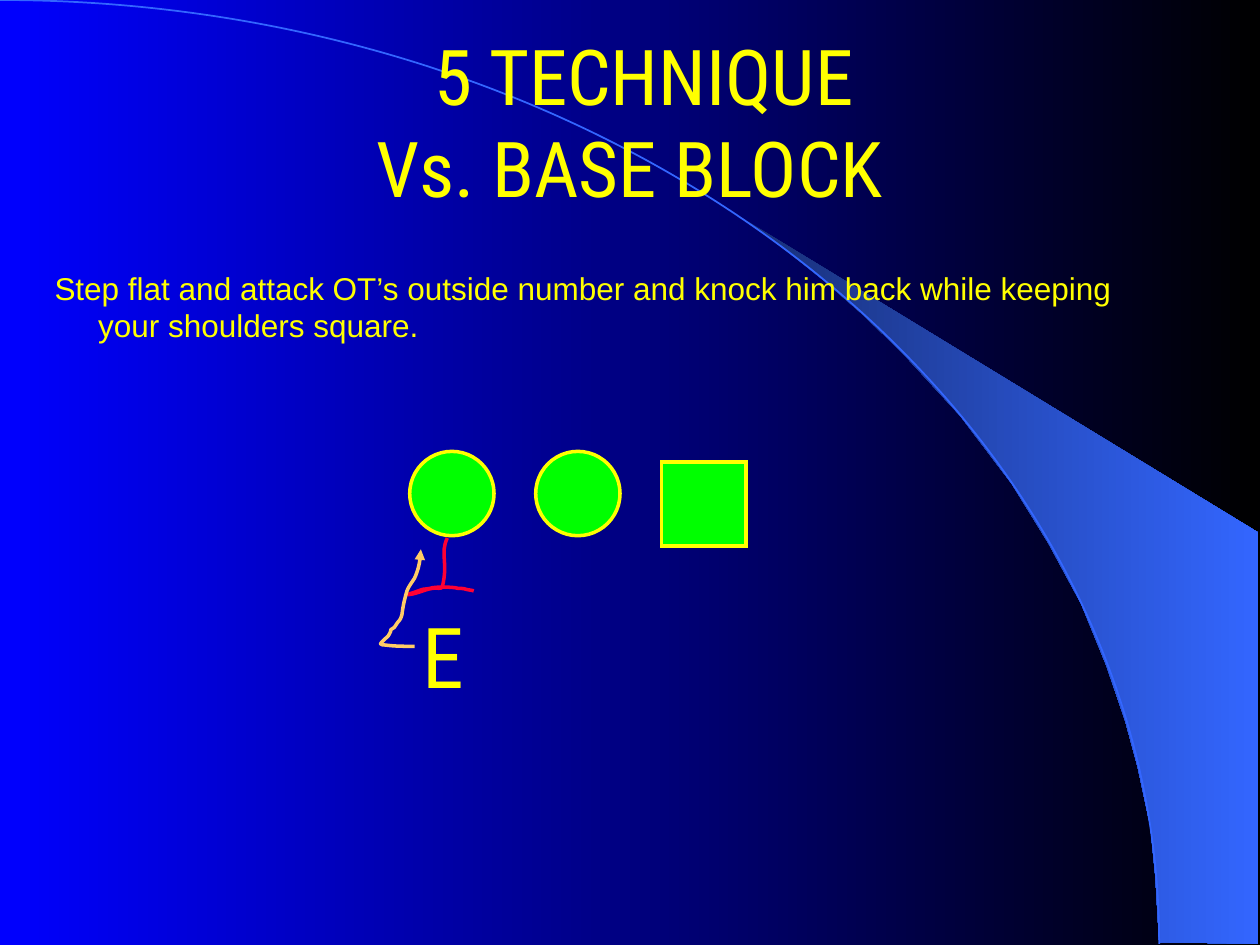
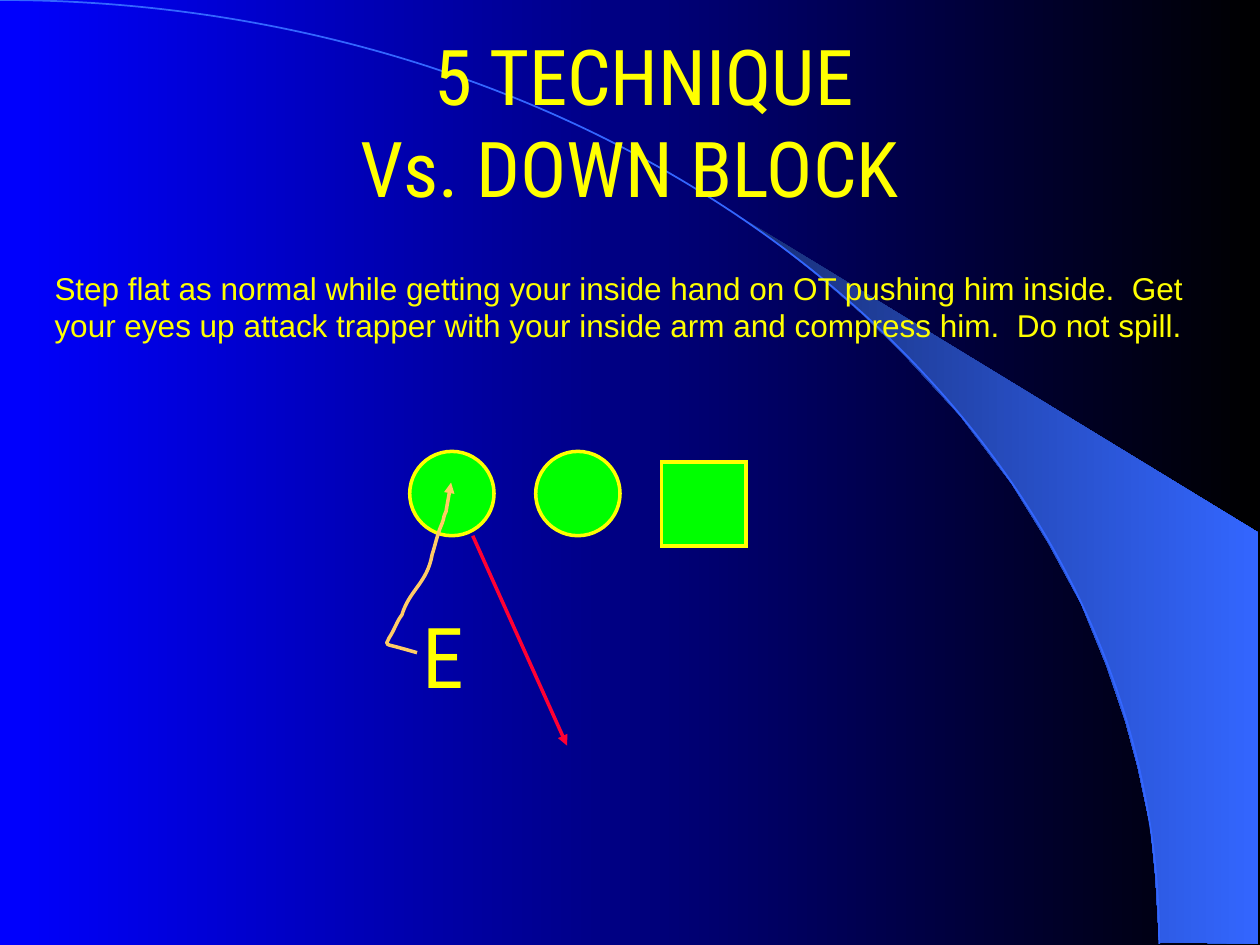
from lxml import etree
from pptx import Presentation
from pptx.dml.color import RGBColor
from pptx.enum.shapes import MSO_CONNECTOR, MSO_SHAPE
from pptx.enum.text import MSO_ANCHOR, MSO_AUTO_SIZE, PP_ALIGN
from pptx.oxml.ns import qn
from pptx.util import Cm, Pt

RECT, OVAL = MSO_SHAPE.RECTANGLE, MSO_SHAPE.OVAL
LINE = MSO_CONNECTOR.STRAIGHT
MIDDLE, CENTER = MSO_ANCHOR.MIDDLE, PP_ALIGN.CENTER
FIXED, GROW = MSO_AUTO_SIZE.NONE, MSO_AUTO_SIZE.SHAPE_TO_FIT_TEXT

BLUE = RGBColor(0x00, 0x00, 0xFF)
BLACK = RGBColor(0x00, 0x00, 0x00)
DUSK = RGBColor(0x18, 0x2F, 0x76)
SKY = RGBColor(0x33, 0x66, 0xFF)
YELLOW = RGBColor(0xFF, 0xFF, 0x00)
GREEN = RGBColor(0x00, 0xFF, 0x00)
RED = RGBColor(0xFF, 0x00, 0x33)
SAND = RGBColor(0xFF, 0xCC, 0x66)
HEAD, BODY = "Roboto Condensed", "Arial"

# Outlines are in units of a tenth of the slide width.
WEDGE = [(9.2, 7.48), (9.99, 7.49), (9.99, 4.23), (5.89, 1.73), (6.24, 1.99),
         (6.53, 2.22), (6.85, 2.5), (7.16, 2.8), (7.62, 3.3), (8.03, 3.84),
         (8.32, 4.31), (8.58, 4.79), (8.78, 5.28), (8.93, 5.72),
         (9.03, 6.09), (9.13, 6.56), (9.17, 6.96), (9.2, 7.48)]
# Curves: a start point, then two handles and an end for each piece.
ARC = [(0, 0), (5.08, 0), (9.2, 3.35), (9.2, 7.49)]
BLOCK = [(3.55, 4.27), (3.49, 4.4), (3.56, 4.46), (3.51, 4.66),
         (3.5, 4.68), (3.46, 4.66), (3.43, 4.67),
         (3.36, 4.68), (3.3, 4.72), (3.22, 4.72),
         (3.21, 4.72), (3.24, 4.72), (3.26, 4.71),
         (3.27, 4.71), (3.28, 4.7), (3.29, 4.7),
         (3.3, 4.7), (3.31, 4.69), (3.32, 4.69),
         (3.37, 4.67), (3.35, 4.68), (3.41, 4.67),
         (3.44, 4.66), (3.48, 4.66), (3.51, 4.66),
         (3.56, 4.66), (3.6, 4.66), (3.64, 4.67),
         (3.67, 4.67), (3.69, 4.67), (3.71, 4.68),
         (3.73, 4.68), (3.76, 4.69), (3.76, 4.69)]
ATTACK = [(3.29, 5.13), (3.21, 5.13), (3.13, 5.13), (3.06, 5.12),
          (3.04, 5.12), (3.03, 5.12), (3.02, 5.11),
          (3.02, 5.1), (3.08, 5.05), (3.08, 5.05),
          (3.13, 4.97), (3.07, 5.02), (3.13, 4.98),
          (3.18, 4.9), (3.17, 4.94), (3.19, 4.88),
          (3.2, 4.8), (3.21, 4.76), (3.23, 4.69),
          (3.24, 4.66), (3.27, 4.62), (3.29, 4.59),
          (3.32, 4.52), (3.34, 4.43), (3.34, 4.36)]
SQUEEZE = [(3.31, 5.18), (3.24, 5.16), (3.17, 5.14), (3.09, 5.12),
           (3.08, 5.11), (3.07, 5.12), (3.07, 5.1),
           (3.07, 5.08), (3.09, 5.08), (3.09, 5.06),
           (3.13, 5), (3.15, 4.93), (3.19, 4.88),
           (3.25, 4.68), (3.39, 4.63), (3.43, 4.4),
           (3.45, 4.34), (3.46, 4.29), (3.48, 4.23),
           (3.49, 4.19), (3.51, 4.16), (3.52, 4.12),
           (3.52, 4.1), (3.54, 4.06), (3.54, 4.06),
           (3.55, 4), (3.56, 3.95), (3.57, 3.89),
           (3.58, 3.87), (3.58, 3.83), (3.58, 3.83)]


def outline(slide, points, close=False):
    spots = [(Cm(x * 2.54), Cm(y * 2.54)) for x, y in points]
    pen = slide.shapes.build_freeform(*spots[0])
    pen.add_line_segments(spots[1:], close=close)
    shape = pen.convert_to_shape()
    shape.shadow.inherit = False
    return shape


def bend(shape):
    """Join each three straight pieces of the outline into a cubic one."""
    lines = list(shape.element.iter(qn("a:lnTo")))
    for i in range(0, len(lines), 3):
        cubic = etree.Element(qn("a:cubicBezTo"))
        lines[i].addprevious(cubic)
        for line in lines[i:i + 3]:
            cubic.append(line[0])
            line.getparent().remove(line)


def blend(fill, start, end):
    fill.gradient()
    fill.gradient_angle = 0
    for stop, color in zip(fill.gradient_stops, (start, end)):
        stop.color.rgb = color


def stroke(shape, color, width=2, arrow=False, sharp=False):
    shape.line.color.rgb = color
    shape.line.width = Pt(width)
    edge = shape.element.spPr.find(qn("a:ln"))
    if sharp:
        etree.SubElement(edge, qn("a:miter"), lim="800000")
    if arrow:
        etree.SubElement(edge, qn("a:tailEnd"), type="triangle")


def add_curve(slide, curve, color, width=2, arrow=False):
    shape = outline(slide, curve)
    bend(shape)
    shape.fill.background()
    stroke(shape, color, width, arrow)
    return shape


def add_arrow(slide, x1, y1, x2, y2, color):
    line = slide.shapes.add_connector(LINE, Cm(x1), Cm(y1), Cm(x2), Cm(y2))
    stroke(line, color, arrow=True)
    etree.SubElement(line.element.spPr, qn("a:effectLst"))


def set_font(run, name, size):
    run.font.name = name
    run.font.size = Pt(size)
    run.font.color.rgb = YELLOW


def add_title(slide, lines):
    title = slide.shapes.title
    title.left, title.top = Cm(1.9), Cm(0)
    title.width, title.height = Cm(21.6), Cm(4.87)
    frame = title.text_frame
    frame.auto_size, frame.vertical_anchor = FIXED, MIDDLE
    para = frame.paragraphs[0]
    para.alignment = CENTER
    props = para._p.get_or_add_pPr()
    props.set("marL", "0")
    props.set("indent", str(Cm(0.58)))
    for i, line in enumerate(lines):
        if i:
            para.add_line_break()
        run = para.add_run()
        run.text = line
        set_font(run, HEAD, 44)


def add_text(slide, box, lines, name, size, inset=0):
    """Add unwrapped lines; those after the first start at the inset."""
    shape = slide.shapes.add_textbox(*map(Cm, box))
    frame = shape.text_frame
    frame.word_wrap, frame.auto_size = False, GROW
    for i, line in enumerate(lines):
        para = frame.add_paragraph() if i else frame.paragraphs[0]
        if i and inset:
            para._p.get_or_add_pPr().set("marL", str(Cm(inset)))
        run = para.add_run()
        run.text = line
        set_font(run, name, size)


def add_player(slide, kind, left, top):
    shape = slide.shapes.add_shape(kind, Cm(left), Cm(top), Cm(1.7), Cm(1.7))
    shape.shadow.inherit = False
    shape.fill.solid()
    shape.fill.fore_color.rgb = GREEN
    stroke(shape, YELLOW, sharp=kind == RECT)


def add_front(slide):
    """Draw the blockers and the end."""
    add_player(slide, RECT, 13.34, 9.31)
    for i in range(2):
        add_player(slide, OVAL, 8.26 + 2.54 * i, 9.1)
    add_text(slide, (8.26, 12.07, 1.22, 2.29), ["E"], HEAD, 48)


def dress(slide, layout):
    """Put the backdrop and its arc on the layout."""
    blend(layout.background.fill, BLUE, BLACK)
    wedge = outline(slide, WEDGE, close=True)
    blend(wedge.fill, DUSK, SKY)
    wedge.line.fill.background()
    arc = add_curve(slide, ARC, SKY, 1)
    for i, shape in enumerate((wedge, arc)):
        layout.shapes.element.insert(2 + i, shape.element)


def add_play(deck, layout, block, width, lines, inset=0):
    slide = deck.slides.add_slide(layout)
    add_title(slide, ["5 TECHNIQUE", f"Vs. {block} BLOCK"])
    add_text(slide, (0.85, 5.29, width, 1.78), lines, BODY, 18, inset)
    add_front(slide)
    return slide


def main():
    deck = Presentation()
    deck.slide_width, deck.slide_height = Cm(25.4), Cm(19.05)
    layout = deck.slide_layouts[5]

    base = add_play(deck, layout, "BASE", 22, [
        "Step flat and attack OT’s outside number and knock him back "
        "while keeping",
        "your shoulders square."], inset=0.88)
    dress(base, layout)
    add_curve(base, BLOCK, RED)
    add_curve(base, ATTACK, SAND, arrow=True)

    down = add_play(deck, layout, "DOWN", 23.44, [
        "Step flat as normal while getting your inside hand on OT "
        "pushing him inside.  Get",
        "your eyes up attack trapper with your inside arm and "
        "compress him.  Do not spill."])
    add_arrow(down, 9.53, 10.8, 11.43, 15.03, RED)
    add_curve(down, SQUEEZE, SAND, arrow=True)

    deck.save("out.pptx")


if __name__ == "__main__":
    main()
